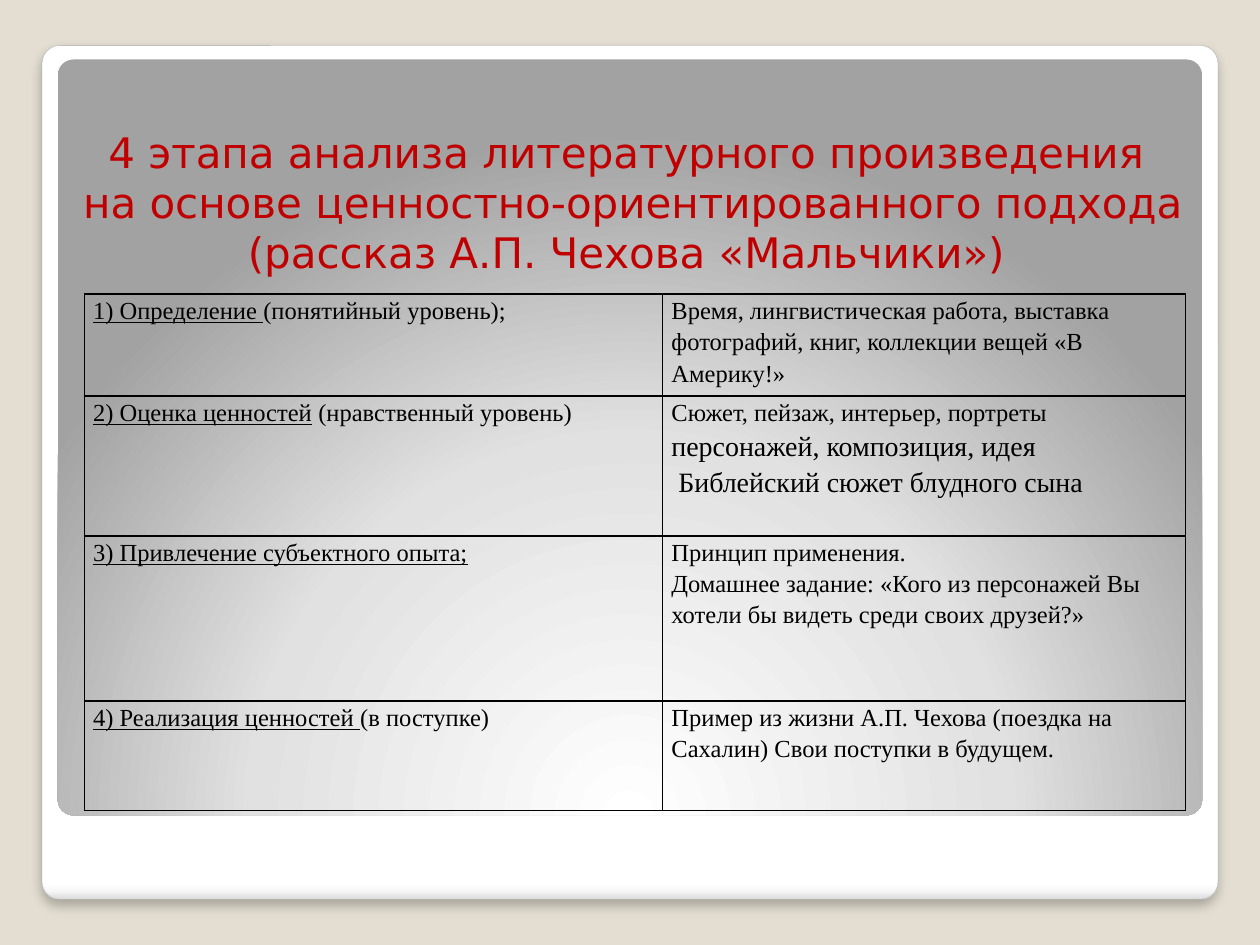
"""Builds a slide with a four-stage table for analysing a literary work."""
from lxml import etree
from pptx import Presentation
from pptx.dml.color import RGBColor
from pptx.enum import shapes, text
from pptx.oxml import parse_xml
from pptx.oxml.ns import nsdecls, qn
from pptx.util import Pt

COLORS = {"back": "E3DED1", "title": "C00000", "ink": "000000", "edge": "A4A4A4"}
TITLE = ("4 этапа анализа литературного произведения \v"
         "на основе ценностно-ориентированного подхода\v"
         "(рассказ А.П. Чехова «Мальчики») ")
TITLE_FONT, TABLE_FONT = "DejaVu Sans", "Times New Roman"
COLUMNS = [330.5, 298.8]
TABLE_LEFT, TABLE_TOP = 48.2, 168
# Each row: height, (underlined, plain) stage, paragraphs of (text, size) runs.
ROWS = [
    (58.3, ("1) Определение ", "(понятийный уровень);"),
     [[("Время, лингвистическая работа, выставка фотографий, книг, "
        "коллекции вещей «В Америку!»", 14)]]),
    (79.9, ("2) Оценка ценностей", " (нравственный уровень)"),
     [[("Сюжет, пейзаж, интерьер, портреты ", 14),
       ("персонажей, композиция, идея", 16)],
      [("\u00a0Библейский сюжет блудного сына", 16)]]),
    (94.3, ("3) Привлечение субъектного опыта;", ""),
     [[("Принцип применения.", 14)],
      [("Домашнее задание: «Кого из персонажей Вы хотели бы видеть "
        "среди своих друзей?»", 14)]]),
    (62.6, ("4) Реализация ценностей ", "(в поступке)"),
     [[("Пример из жизни А.П. Чехова (поездка на Сахалин) "
        "Свои поступки в будущем.", 14)]]),
]
FRAME_STOPS = [(0, "FFFFFF"), (98, "FFFFFF"), (99, "F7F7F7"), (100, "DADADA")]
PANEL_STOPS = [(0, "FFFFFF"), (55, "E1E1E1"), (100, "A2A2A2")]
DOWNWARD = '<a:lin ang="5400000" scaled="0"/>'
FROM_BELOW = ('<a:path path="circle"><a:fillToRect l="50000" t="175000" '
              'r="50000" b="-75000"/></a:path>')


def rgb(name):
    return RGBColor.from_string(COLORS[name])


def add_card(s, box, stops, direction):
    sp = s.shapes.add_shape(shapes.MSO_SHAPE.ROUNDED_RECTANGLE, *map(Pt, box))
    sp.adjustments[0] = 0.021
    sp.shadow.inherit = False
    sp.line.fill.background()
    marks = "".join(f'<a:gs pos="{pos * 1000}"><a:srgbClr val="{color}"/></a:gs>'
                    for pos, color in stops)
    grad = parse_xml(f'<a:gradFill {nsdecls("a")} rotWithShape="1">'
                     f'<a:gsLst>{marks}</a:gsLst>{direction}</a:gradFill>')
    sp._element.spPr.find(qn("a:prstGeom")).addnext(grad)
    return sp


def add_shadow(sp):
    effects = sp._element.spPr.find(qn("a:effectLst"))
    effects.append(parse_xml(
        f'<a:outerShdw {nsdecls("a")} blurRad="{Pt(6)}" dist="{Pt(4)}" dir="5400000" '
        f'algn="t" rotWithShape="0"><a:srgbClr val="{COLORS["ink"]}">'
        '<a:alpha val="25000"/></a:srgbClr></a:outerShdw>'))


def add_borders(cell):
    tcPr = cell._tc.get_or_add_tcPr()
    for i, side in enumerate(("lnL", "lnR", "lnT", "lnB")):
        ln = etree.Element(qn(f"a:{side}"), w=str(Pt(1)))
        fill = etree.SubElement(ln, qn("a:solidFill"))
        etree.SubElement(fill, qn("a:srgbClr"), val=COLORS["ink"])
        tcPr.insert(i, ln)


def fill_cell(cell, paragraphs):
    cell.margin_left = cell.margin_right = Pt(5)
    cell.margin_top = cell.margin_bottom = 0
    cell.fill.background()
    add_borders(cell)
    tf = cell.text_frame
    for i, runs in enumerate(paragraphs):
        p = tf.add_paragraph() if i else tf.paragraphs[0]
        p.line_spacing = 1.15
        p.font.name, p.font.color.rgb = TABLE_FONT, rgb("ink")
        for words, size, underline in runs:
            r = p.add_run()
            r.text = words
            r.font.size, r.font.underline = Pt(size), underline


def add_title(s):
    tf = s.shapes.add_textbox(Pt(39.6), Pt(37.4), Pt(644.4), Pt(124.6)).text_frame
    tf.word_wrap = True
    tf.vertical_anchor = text.MSO_ANCHOR.BOTTOM
    p = tf.paragraphs[0]
    p.text = TITLE
    p.alignment = text.PP_ALIGN.CENTER
    p.font.name, p.font.size, p.font.color.rgb = TITLE_FONT, Pt(24), rgb("title")


def add_stages(s):
    table = s.shapes.add_table(len(ROWS), len(COLUMNS), Pt(TABLE_LEFT), Pt(TABLE_TOP),
                               Pt(sum(COLUMNS)), Pt(sum(row[0] for row in ROWS))).table
    table.first_row = table.horz_banding = False
    for column, width in zip(table.columns, COLUMNS):
        column.width = Pt(width)
    for i, (height, (stage, level), content) in enumerate(ROWS):
        table.rows[i].height = Pt(height)
        label = [(stage, 14, True)] + ([(level, 14, False)] if level else [])
        fill_cell(table.cell(i, 0), [label])
        fill_cell(table.cell(i, 1), [[(*run, False) for run in runs] for runs in content])


def main():
    prs = Presentation()
    prs.slide_width, prs.slide_height = Pt(720), Pt(540)
    s = prs.slides.add_slide(prs.slide_layouts[6])
    s.background.fill.solid()
    s.background.fill.fore_color.rgb = rgb("back")
    frame = add_card(s, (24, 26, 672, 488), FRAME_STOPS, DOWNWARD)
    frame.line.color.rgb, frame.line.width = rgb("edge"), Pt(0.16)
    add_shadow(frame)
    add_card(s, (33, 34, 654, 432), PANEL_STOPS, FROM_BELOW)
    add_title(s)
    add_stages(s)
    prs.save("out.pptx")


if __name__ == "__main__":
    main()
